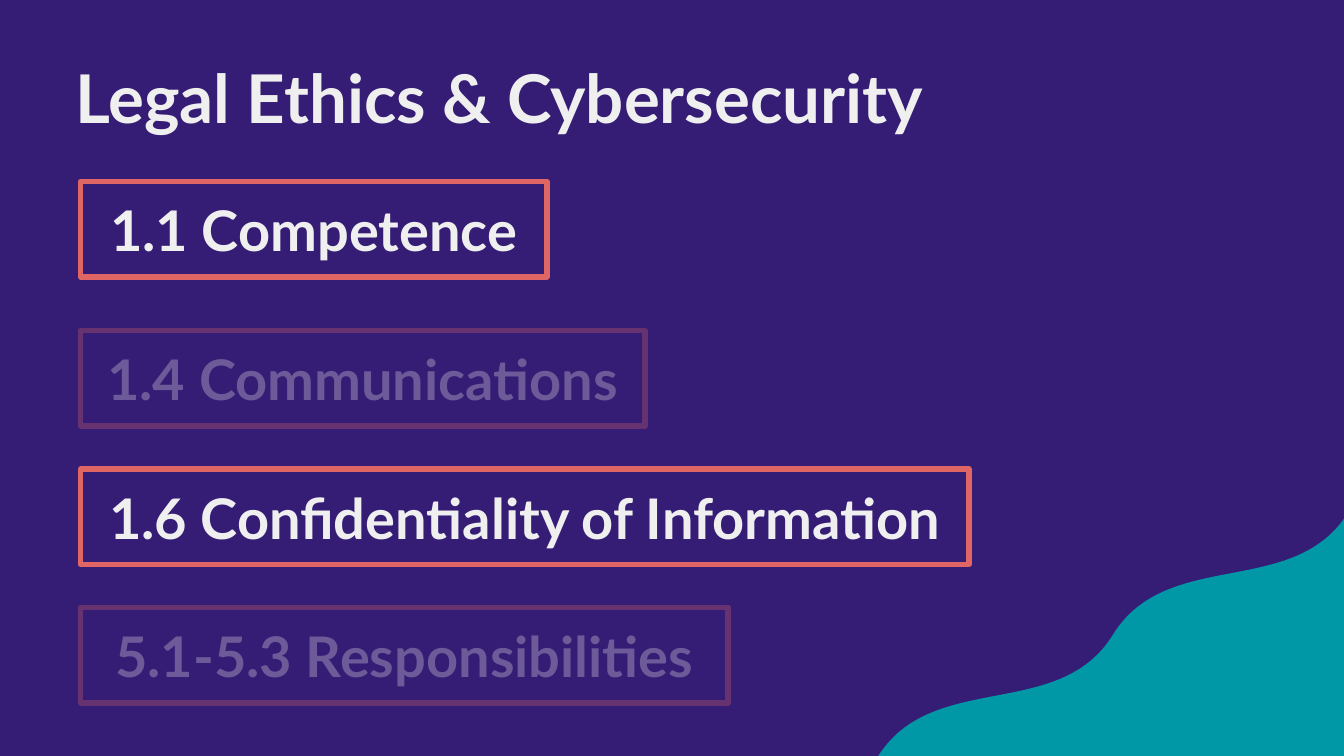
from dataclasses import dataclass

from lxml.etree import SubElement
from pptx import Presentation
from pptx.dml.color import RGBColor
from pptx.enum.shapes import MSO_SHAPE as Preset
from pptx.enum.text import MSO_ANCHOR as Anchor, MSO_AUTO_SIZE as AutoSize, PP_ALIGN as Align
from pptx.oxml.ns import qn
from pptx.util import Pt


@dataclass(frozen=True)
class Theme:
    font: str = "Lato"
    background: RGBColor = RGBColor.from_string("351C75")
    text: RGBColor = RGBColor.from_string("EFEFEF")
    outline: RGBColor = RGBColor.from_string("E06666")
    wave: RGBColor = RGBColor.from_string("0097A7")
    title_size: int = 36
    rule_size: int = 30
    outline_width: float = 3
    hairline: float = 0.75
    inset: float = 7.2
    veil_opacity: int = 70


THEME = Theme()
RULE_LEFT, RULE_HEIGHT = 43.2, 51.1

# rule, top, width
RULES = [
    ("1.1 Competence", 97.2, 249.8),
    ("1.4 Communications", 177.1, 302.4),
    ("1.6 Confidentiality of Information", 251.3, 475.9),
    ("5.1-5.3 Responsibilities", 325.4, 347),
]
# left, top, width, height of the veils over the rules not in focus
VEILS = [(37.4, 172.8, 318.2, 61.9), (35.3, 319, 364.3, 61.9)]


def write_text(frame, text, size, align, anchor):
    frame.word_wrap = True
    frame.auto_size = AutoSize.NONE
    frame.vertical_anchor = anchor
    frame.margin_left = frame.margin_right = Pt(THEME.inset)
    frame.margin_top = frame.margin_bottom = Pt(THEME.inset)
    paragraph = frame.paragraphs[0]
    paragraph.alignment = align
    paragraph.space_before = Pt(0)
    run = paragraph.add_run()
    run.text = text
    run.font.name = THEME.font
    run.font.size = Pt(size)
    run.font.bold = True
    run.font.color.rgb = THEME.text


def add_preset(slide, preset, box, line, width, fill=None):
    shape = slide.shapes.add_shape(preset, *map(Pt, box))
    shape.shadow.inherit = False
    shape.line.color.rgb = line
    shape.line.width = Pt(width)
    if fill is None:
        shape.fill.background()
    else:
        shape.fill.solid()
        shape.fill.fore_color.rgb = fill
    return shape


def add_title(slide, text):
    title = slide.shapes.title
    title.left, title.top = Pt(33.1), Pt(23)
    title.width, title.height = Pt(680.4), Pt(73.4)
    write_text(title.text_frame, text, THEME.title_size, Align.LEFT, Anchor.TOP)


def add_rule(slide, text, top, width):
    box = (RULE_LEFT, top, width, RULE_HEIGHT)
    rule = add_preset(slide, Preset.RECTANGLE, box, THEME.outline, THEME.outline_width)
    write_text(rule.text_frame, text, THEME.rule_size, Align.CENTER, Anchor.MIDDLE)


def add_corner_wave(slide):
    box = (483.1, 324.7, 284.4, 141.8)
    wave = add_preset(slide, Preset.DOUBLE_WAVE, box, THEME.wave, THEME.hairline, THEME.wave)
    wave.adjustments[0] = 0.06
    wave.adjustments[1] = 0
    wave.rotation = 332.5


def add_veil(slide, box):
    """Dim what lies beneath with a translucent panel in the background colour."""
    veil = add_preset(slide, Preset.RECTANGLE, box, THEME.background,
                      THEME.hairline, THEME.background)
    color = veil.fill._xPr.find(qn("a:solidFill"))[0]
    SubElement(color, qn("a:alpha"), val=str(THEME.veil_opacity * 1000))


def main():
    deck = Presentation()
    deck.slide_width, deck.slide_height = Pt(720), Pt(405)
    slide = deck.slides.add_slide(deck.slide_layouts[5])
    slide.background.fill.solid()
    slide.background.fill.fore_color.rgb = THEME.background

    add_title(slide, "Legal Ethics & Cybersecurity")
    for text, top, width in RULES:
        add_rule(slide, text, top, width)
    add_corner_wave(slide)
    for box in VEILS:
        add_veil(slide, box)
    deck.save("out.pptx")


if __name__ == "__main__":
    main()
